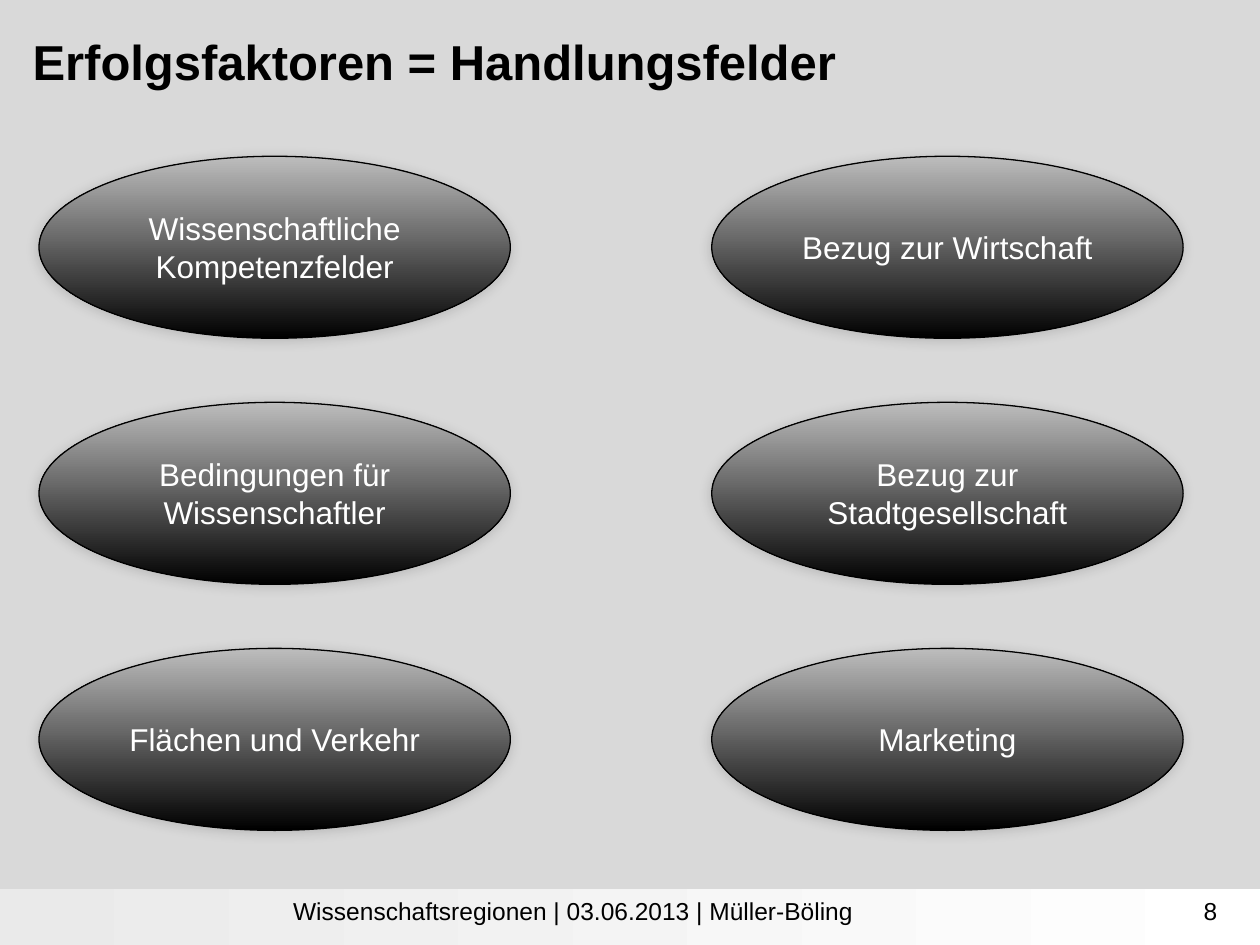
from lxml import etree
from pptx import Presentation
from pptx.dml.color import RGBColor
from pptx.enum.shapes import MSO_SHAPE
from pptx.enum.text import MSO_ANCHOR, PP_ALIGN
from pptx.oxml.ns import qn
from pptx.util import Inches, Pt

OVAL, RECT = MSO_SHAPE.OVAL, MSO_SHAPE.RECTANGLE
TOP, MIDDLE = MSO_ANCHOR.TOP, MSO_ANCHOR.MIDDLE
LEFT, CENTER, RIGHT = PP_ALIGN.LEFT, PP_ALIGN.CENTER, PP_ALIGN.RIGHT

COLORS = {
    "back": "D9D9D9",
    "black": "000000",
    "white": "FFFFFF",
    "grey": "BDBDBD",
    "pale": "EAEAEA",
}
WIDTH, HEIGHT = 10, 7.5
FACTORS = [
    ["Wissenschaftliche Kompetenzfelder", "Bezug zur Wirtschaft"],
    ["Bedingungen für Wissenschaftler", "Bezug zur Stadtgesellschaft"],
    ["Flächen und Verkehr", "Marketing"],
]


def color(name):
    return RGBColor.from_string(COLORS[name])


def inches(box):
    return [Inches(side) for side in box]


def write(shape, text, size=18, ink="black", bold=False, align=CENTER,
          anchor=TOP, inset=0.05):
    frame = shape.text_frame
    frame.word_wrap = True
    frame.vertical_anchor = anchor
    frame.margin_top = Inches(inset)
    par = frame.paragraphs[0]
    par.text = text
    par.alignment = align
    font = par.font
    font.name, font.size, font.bold = "Arial", Pt(size), bold
    font.color.rgb = color(ink)


def label(slide, box, text, **style):
    write(slide.shapes.add_textbox(*inches(box)), text, **style)


def blend(slide, kind, box, start, end, angle):
    shape = slide.shapes.add_shape(kind, *inches(box))
    shape.shadow.inherit = False
    shape.fill.gradient()
    shape.fill.gradient_angle = angle
    for stop, name, place in zip(shape.fill.gradient_stops, (start, end), (0, 1)):
        stop.color.rgb = color(name)
        stop.position = place
    return shape


def shade(shape, alpha=15, blur=7, dist=1, angle=135):
    effects = shape._element.spPr.find(qn("a:effectLst"))
    outer = etree.SubElement(
        effects, qn("a:outerShdw"), blurRad=str(Pt(blur)), dist=str(Pt(dist)),
        dir=str(angle * 60000), algn="ctr", rotWithShape="0")
    tone = etree.SubElement(outer, qn("a:srgbClr"), val=COLORS["black"])
    etree.SubElement(tone, qn("a:alpha"), val=str(alpha * 1000))


def factor(slide, box, text):
    oval = blend(slide, OVAL, box, "black", "grey", 90)
    oval.line.color.rgb = color("black")
    oval.line.width = Pt(0.75)
    shade(oval)
    write(oval, text, ink="white", anchor=MIDDLE)


def field(slide, box, rows, share=(0.412, 0.27)):
    left, top, width, height = box
    wide, high = width * share[0], height * share[1]
    across = (width - wide) / (len(rows[0]) - 1)
    down = (height - high) / (len(rows) - 1)
    for row, texts in enumerate(rows):
        for col, text in enumerate(texts):
            spot = (left + col * across, top + row * down, wide, high)
            factor(slide, spot, text)


def footer(slide, box):
    left, top, width, height = box
    band = blend(slide, RECT, box, "white", "pale", 180)
    band.line.fill.background()
    label(slide, (left + width * 0.016, top, width * 0.878, height),
          "Wissenschaftsregionen | 03.06.2013 | Müller-Böling", size=14)
    label(slide, (left + width * 0.743, top, width * 0.233, height),
          "8", size=14, align=RIGHT)


def main():
    deck = Presentation()
    deck.slide_width, deck.slide_height = inches((WIDTH, HEIGHT))
    slide = deck.slides.add_slide(deck.slide_layouts[6])
    back = slide.background.fill
    back.solid()
    back.fore_color.rgb = color("back")
    footer(slide, (0, 7.06, WIDTH, HEIGHT - 7.06))
    label(slide, (0.16, 0.16, 9.62, 0.7), "Erfolgsfaktoren = Handlungsfelder",
          size=28, bold=True, align=LEFT, inset=0.09)
    field(slide, (0.31, 1.24, 9.08, 5.35), FACTORS)
    deck.save("out.pptx")


if __name__ == "__main__":
    main()
